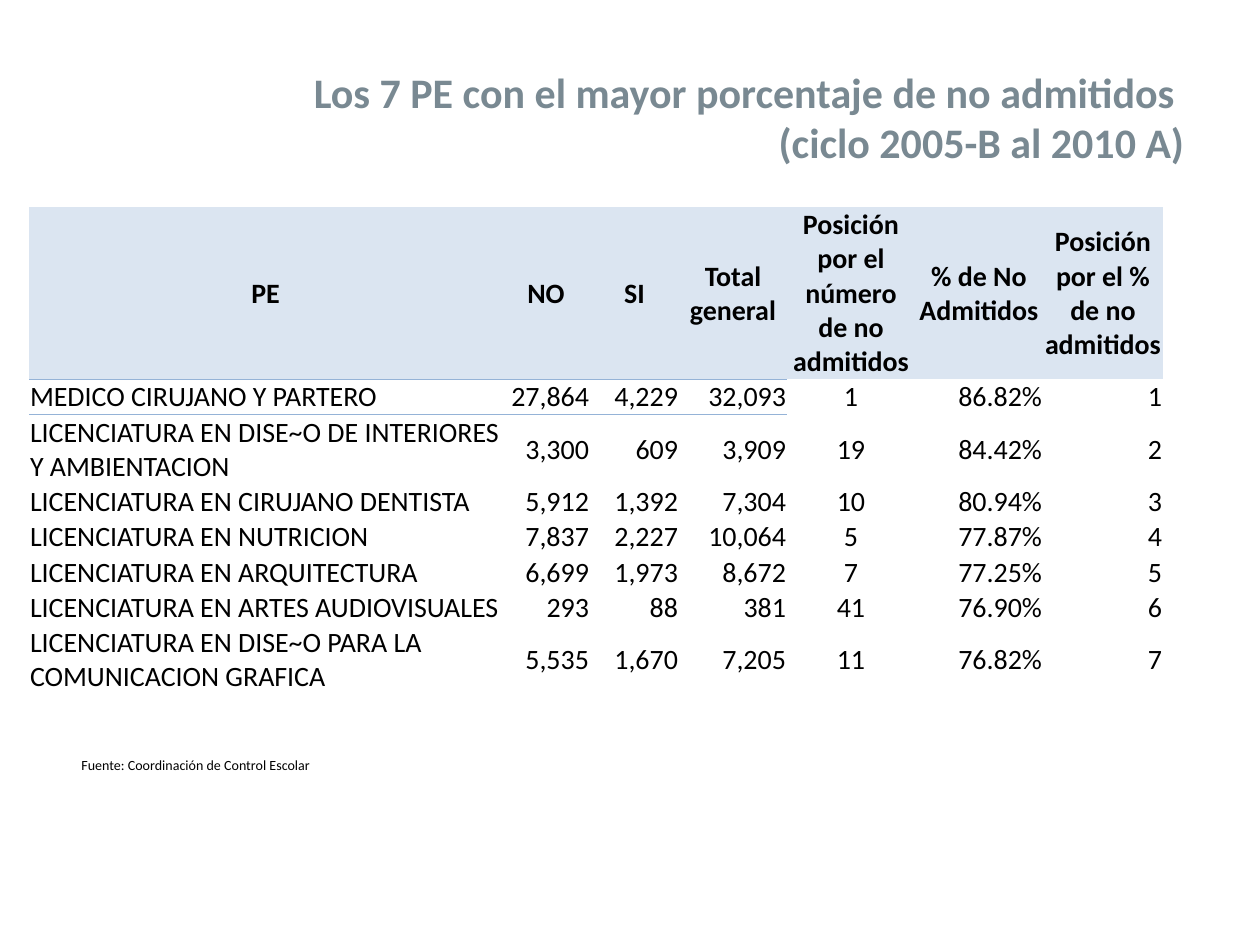
from dataclasses import dataclass

from lxml.etree import SubElement
from pptx import Presentation
from pptx.dml.color import RGBColor as Rgb
from pptx.enum.text import MSO_ANCHOR as Anchor, MSO_AUTO_SIZE as AutoSize, PP_ALIGN as Align
from pptx.oxml.ns import qn
from pptx.util import Emu, Pt

TITLE = ("Los 7 PE con el mayor porcentaje de no admitidos ", "(ciclo 2005-B al 2010 A)")
SOURCE = "Fuente: Coordinación de Control Escolar"
COLUMNS = [
    ("PE", 473, Align.LEFT),
    ("NO", 88, Align.RIGHT),
    ("SI", 89, Align.RIGHT),
    ("Total general", 108, Align.RIGHT),
    ("Posición por el número de no admitidos", 128, Align.CENTER),
    ("% de No Admitidos", 128, Align.RIGHT),
    ("Posición por el % de no admitidos", 120, Align.RIGHT),
]
PROGRAMS = [
    ("MEDICO CIRUJANO Y PARTERO", "27,864", "4,229", "32,093", "1", "86.82%", "1"),
    ("LICENCIATURA EN DISE~O DE INTERIORES Y AMBIENTACION", "3,300", "609", "3,909", "19", "84.42%", "2"),
    ("LICENCIATURA EN CIRUJANO DENTISTA", "5,912", "1,392", "7,304", "10", "80.94%", "3"),
    ("LICENCIATURA EN NUTRICION", "7,837", "2,227", "10,064", "5", "77.87%", "4"),
    ("LICENCIATURA EN ARQUITECTURA", "6,699", "1,973", "8,672", "7", "77.25%", "5"),
    ("LICENCIATURA EN ARTES AUDIOVISUALES", "293", "88", "381", "41", "76.90%", "6"),
    ("LICENCIATURA EN DISE~O PARA LA COMUNICACION GRAFICA", "5,535", "1,670", "7,205", "11", "76.82%", "7"),
]
RULED_COLUMNS = 4
HEADER_HEIGHT, ROW_HEIGHT = 118, 24
TITLE_BOX = (63, 59, 1134, 115)
TABLE_BOX = (29, 207, 1134, 514)
SOURCE_BOX = (69, 748, 630, 32)
PLAIN_TABLE = "{2D5ABB26-0587-4C30-8999-92F81FD0307C}"


@dataclass(frozen=True)
class Theme:
    font: str = "Calibri"
    title: str = "798992"
    ink: str = "000000"
    header: str = "DBE5F1"
    rule: str = "95B3D7"
    title_size: int = 24
    table_size: int = 16
    source_size: int = 8


THEME = Theme()


def px(length):
    return Emu(round(length * 914400 / 126))


def box(lengths):
    return [px(length) for length in lengths]


def style(paragraph, size, color=THEME.ink, bold=False, align=Align.LEFT):
    paragraph.alignment = align
    font = paragraph.font
    font.name, font.size, font.bold = THEME.font, Pt(size), bold
    font.color.rgb = Rgb.from_string(color)


def rule(cell, edge):
    properties = cell._tc.get_or_add_tcPr()
    line = SubElement(properties, qn(f"a:{edge}"), w=str(Pt(0.5)))
    fill = SubElement(line, qn("a:solidFill"))
    SubElement(fill, qn("a:srgbClr"), val=THEME.rule)
    properties.insert(0, line)


def add_title(slide):
    title = slide.shapes.title
    title.left, title.top, title.width, title.height = box(TITLE_BOX)
    frame = title.text_frame
    frame.vertical_anchor = Anchor.MIDDLE
    heading = frame.paragraphs[0]
    heading.add_run().text = TITLE[0]
    heading.add_line_break()
    heading.add_run().text = TITLE[1]
    style(heading, THEME.title_size, THEME.title, True, Align.RIGHT)


def add_programs(slide):
    rows = [[name for name, _, _ in COLUMNS], *PROGRAMS]
    holder = slide.shapes.add_table(len(rows), len(COLUMNS), *box(TABLE_BOX))
    table = holder.table
    table.first_row = table.horz_banding = False
    table._tbl.tblPr.find(qn("a:tableStyleId")).text = PLAIN_TABLE
    for column, (_, width, _) in zip(table.columns, COLUMNS):
        column.width = px(width)
    for r, values in enumerate(rows):
        is_header = r == 0
        table.rows[r].height = px(HEADER_HEIGHT if is_header else ROW_HEIGHT)
        for c, value in enumerate(values):
            cell = table.cell(r, c)
            cell.text = value
            cell.vertical_anchor = Anchor.MIDDLE
            cell.margin_left = cell.margin_top = cell.margin_right = px(1)
            cell.margin_bottom = 0
            align = Align.CENTER if is_header else COLUMNS[c][2]
            style(cell.text_frame.paragraphs[0], THEME.table_size, bold=is_header, align=align)
            if is_header:
                cell.fill.solid()
                cell.fill.fore_color.rgb = Rgb.from_string(THEME.header)
            else:
                cell.fill.background()
            if r < 2 and c < RULED_COLUMNS:
                rule(cell, "lnB" if is_header else "lnT")
    holder.height = px(TABLE_BOX[3])


def add_source(slide):
    frame = slide.shapes.add_textbox(*box(SOURCE_BOX)).text_frame
    frame.word_wrap = True
    frame.auto_size = AutoSize.SHAPE_TO_FIT_TEXT
    frame.text = SOURCE
    note = frame.paragraphs[0]
    note.line_spacing, note.space_after = 1.15, Pt(10)
    style(note, THEME.source_size)


def main():
    deck = Presentation()
    deck.slide_width, deck.slide_height = px(1260), px(945)
    slide = deck.slides.add_slide(deck.slide_layouts[5])
    add_title(slide)
    add_programs(slide)
    add_source(slide)
    deck.save("out.pptx")


if __name__ == "__main__":
    main()
